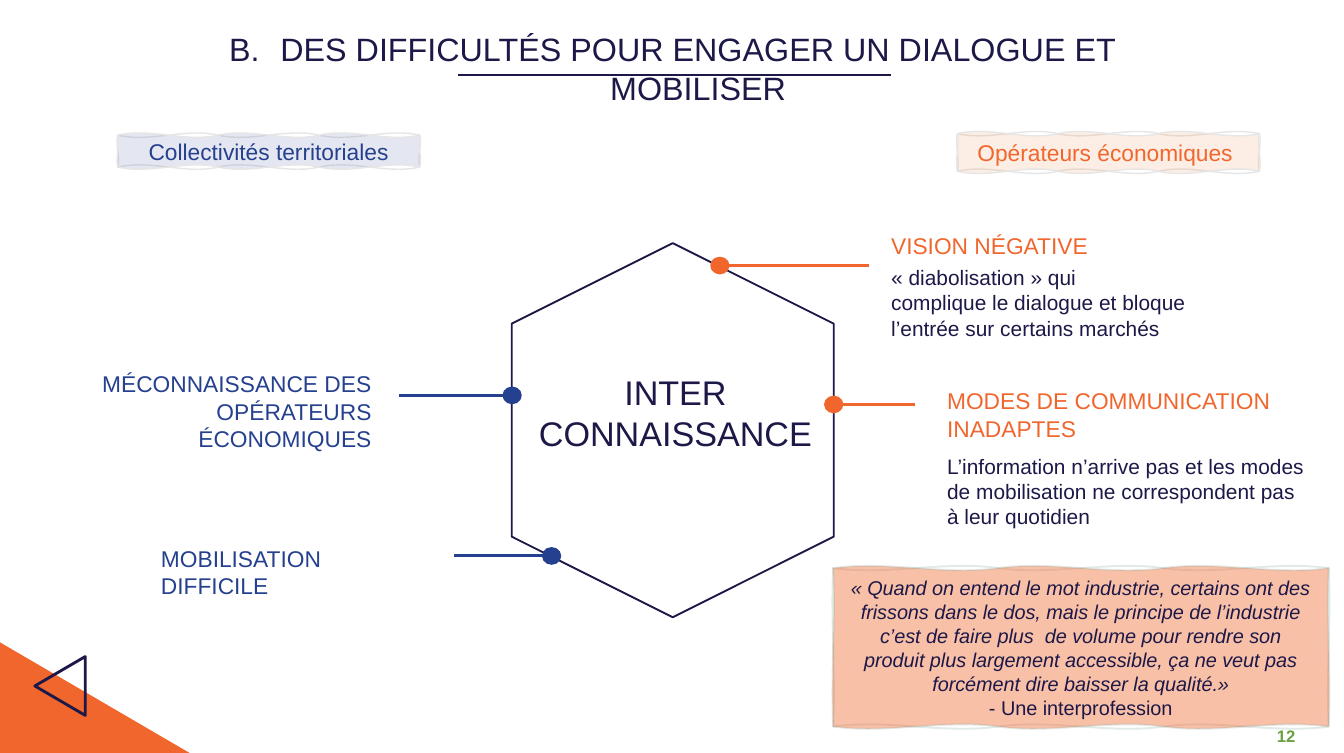
from copy import deepcopy

from lxml.etree import SubElement
from pptx import Presentation
from pptx.dml.color import RGBColor
from pptx.enum.shapes import MSO_CONNECTOR as CONN, MSO_SHAPE as SHAPE
from pptx.enum.text import MSO_ANCHOR as ANCHOR, MSO_AUTO_SIZE as AUTO, PP_ALIGN as ALIGN
from pptx.oxml.ns import qn
from pptx.util import Pt

COLORS = {
    "navy": "1C1847", "blue": "25408F", "orange": "F1662D", "peach": "ED7D31",
    "grey": "E7E6E6", "sage": "92AFA2", "green": "68A042",
}


def rgb(name):
    return RGBColor.from_string(COLORS[name])


def fade(fill, percent):
    color = fill._xPr.find(qn("a:solidFill"))[0]
    SubElement(color, qn("a:alpha"), val=str(percent * 1000))


def paint(sp, fill=None, line=None, width=0.75):
    sp.shadow.inherit = False
    if fill:
        sp.fill.solid()
        sp.fill.fore_color.rgb = rgb(fill)
    else:
        sp.fill.background()
    if line:
        sp.line.color.rgb = rgb(line)
        sp.line.width = Pt(width)
    else:
        sp.line.fill.background()


def style(p, size, color, align=ALIGN.LEFT, bold=False, italic=False):
    p.alignment = align
    font = p.font
    font.name, font.size, font.bold, font.italic = "Arial", Pt(size), bold, italic
    font.color.rgb = rgb(color)


def add_text(s, x, y, w, h, lines, size, color, align=ALIGN.LEFT, bold=False):
    tf = s.shapes.add_textbox(Pt(x), Pt(y), Pt(w), Pt(h)).text_frame
    tf.word_wrap = True
    for i, line in enumerate(lines):
        p = tf.add_paragraph() if i else tf.paragraphs[0]
        p.text = line
        style(p, size, color, align, bold)
    return tf


def add_line(s, x1, y1, x2, y2, color, width):
    line = s.shapes.add_connector(CONN.STRAIGHT, Pt(x1), Pt(y1), Pt(x2), Pt(y2))
    line.line.color.rgb = rgb(color)
    line.line.width = Pt(width)
    SubElement(line._element.spPr, qn("a:effectLst"))


def add_callout(s, x, y, end, color):
    w, h = 9.4, 8.6
    add_line(s, x, y, end, y, color, 1.5)
    dot = s.shapes.add_shape(SHAPE.FLOWCHART_CONNECTOR,
                             Pt(x - w / 2), Pt(y - h / 2), Pt(w), Pt(h))
    paint(dot, color, color)


def bend_edges(outline, bulge):
    start = outline[0][0]
    for edge in outline.findall(qn("a:lnTo")):
        end = edge[0]
        x1, y1, x2, y2 = [int(pt.get(k)) for pt in (start, end) for k in ("x", "y")]
        dx, dy = (0, Pt(bulge)) if y1 == y2 else (Pt(bulge / 3), 0)
        edge.tag = qn("a:cubicBezTo")
        for i, side in ((1, 1), (2, -1)):
            control = edge.makeelement(qn("a:pt"), {
                "x": str(x1 + (x2 - x1) * i // 3 + side * dx),
                "y": str(y1 + (y2 - y1) * i // 3 + side * dy)})
            edge.insert(i - 1, control)
        start = end


def add_sketch_box(s, x, y, w, h, fill, opacity, line, width=0.75, line_opacity=100):
    top = [(x + w * i / 3, y) for i in range(4)]
    bottom = [(px, y + h) for px, _ in reversed(top)]
    points = [(Pt(px), Pt(py)) for px, py in top + bottom + top[:1]]
    builder = s.shapes.build_freeform(*points[0])
    builder.add_line_segments(points[1:], close=True)
    sp = builder.convert_to_shape()
    front = next(sp._element.iter(qn("a:path")))
    back = deepcopy(front)
    back.set("fill", "none")
    front.addprevious(back)
    bend_edges(back, 4)
    bend_edges(front, -4)
    paint(sp, fill, line, width)
    fade(sp.fill, opacity)
    fade(sp.line.fill, line_opacity)
    tf = sp.text_frame
    tf.word_wrap = True
    tf.vertical_anchor = ANCHOR.MIDDLE
    return tf


def add_label(s, x, y, w, h, text, fill, opacity, color):
    p = add_sketch_box(s, x, y, w, h, fill, opacity, "grey").paragraphs[0]
    p.text = text
    style(p, 12, color, ALIGN.CENTER)


def add_title(s, x, y, w, h):
    title = s.shapes.title
    title.left, title.top, title.width, title.height = Pt(x), Pt(y), Pt(w), Pt(h)
    tf = title.text_frame
    tf.word_wrap = True
    tf.auto_size = AUTO.NONE
    tf.vertical_anchor = ANCHOR.TOP
    p = tf.paragraphs[0]
    p.text = "DES DIFFICULTÉS POUR ENGAGER UN DIALOGUE ET MOBILISER"
    style(p, 17, "navy", ALIGN.CENTER)
    pPr = p._p.get_or_add_pPr()
    pPr.set("marL", str(Pt(27)))
    pPr.set("indent", str(-Pt(27)))
    number = pPr.makeelement(qn("a:buAutoNum"), {"type": "alphaUcPeriod", "startAt": "2"})
    bullet_color = pPr.makeelement(qn("a:buClr"), {})
    SubElement(bullet_color, qn("a:srgbClr"), val=COLORS["navy"])
    pPr.insert(0, number)
    pPr.insert(0, bullet_color)
    add_line(s, x + 168, y + h - 0.5, x + 396.2, y + h - 0.5, "navy", 1)


def add_hexagon(s, x, y, w, h):
    sp = s.shapes.add_shape(SHAPE.HEXAGON, Pt(x + (w - h) / 2), Pt(y + (h - w) / 2),
                            Pt(h), Pt(w))
    sp.rotation = 90
    sp.adjustments[0] = 0.25
    paint(sp, None, "navy", 1)
    add_text(s, x - 33.5, y + 64.1, w + 70, 51, ["INTER", "CONNAISSANCE"], 18, "navy",
             ALIGN.CENTER)


def add_authorities(s, x, y):
    add_label(s, x + 43.3, y + 1, 159.2, 16.8, "Collectivités territoriales",
              "blue", 12, "blue")
    add_text(s, x, y + 121.2, 184.2, 36, ["MÉCONNAISSANCE DES OPÉRATEURS ÉCONOMIQUES"],
             12, "blue", ALIGN.RIGHT)
    add_text(s, x + 59, y + 213.2, 130, 36, ["MOBILISATION DIFFICILE"], 12, "blue")
    add_callout(s, x + 251.2, y + 138.1, x + 191.4, "blue")
    add_callout(s, x + 272, y + 222.7, x + 220.8, "blue")


def add_operators(s, x, y):
    add_label(s, x + 42, y + 0.2, 159.2, 19.8, "Opérateurs économiques ",
              "peach", 13, "orange")
    items = [
        (0, 48.5, 17.4, "VISION NÉGATIVE",
         "«\u00a0diabolisation\u00a0» qui\vcomplique le dialogue et bloque l’entrée "
         "sur certains marchés"),
        (29.5, 130.2, 35.1, "MODES DE COMMUNICATION INADAPTES",
         "L’information n’arrive pas et les modes de mobilisation ne correspondent pas "
         "à leur quotidien"),
    ]
    for dx, dy, gap, head, body in items:
        add_text(s, x + dx, y + dy, 210, 22, [head], 12, "orange")
        add_text(s, x + dx, y + dy + gap, 206.6, 47.5, [body], 11, "navy")
    add_callout(s, x - 83.2, y + 69.7, x - 4.5, "orange")
    add_callout(s, x - 23.2, y + 142.9, x + 19.4, "orange")


def add_quote(s, x, y, w, h):
    tf = add_sketch_box(s, x, y, w, h, "orange", 41, "sage", 1, 25)
    tf.margin_left = tf.margin_right = Pt(8.8)
    quote, author = tf.paragraphs[0], tf.add_paragraph()
    quote.text = (
        "«\u00a0Quand on entend le mot industrie, certains ont des frissons dans le dos, "
        "mais le principe de l’industrie c’est de faire plus  de volume pour rendre son "
        "produit plus largement accessible, ça ne veut pas forcément dire baisser la "
        "qualité.»")
    author.text = "- Une interprofession"
    style(quote, 10.5, "navy", ALIGN.CENTER, italic=True)
    style(author, 10.5, "navy", ALIGN.CENTER)


def add_corner(s, x, y, w, h):
    corner = s.shapes.add_shape(SHAPE.RIGHT_TRIANGLE, Pt(x), Pt(y), Pt(w), Pt(h))
    paint(corner, "orange")
    arrow = s.shapes.add_shape(SHAPE.ISOSCELES_TRIANGLE, Pt(x + 16.2), Pt(y + 9.7),
                               Pt(31), Pt(26.6))
    arrow.rotation = 270
    paint(arrow, None, "navy", 1.5)


def add_page_number(s, x, y, w, h):
    tf = add_text(s, x, y, w, h, ["12"], 8.8, "green", ALIGN.RIGHT, bold=True)
    tf.vertical_anchor = ANCHOR.MIDDLE


def main():
    prs = Presentation()
    prs.slide_width, prs.slide_height = Pt(708.5), Pt(396.7)
    s = prs.slides.add_slide(prs.slide_layouts[5])
    add_title(s, 73.4, 12, 562.3, 28)
    add_hexagon(s, 269.7, 128.1, 169.8, 197.1)
    add_authorities(s, 18.8, 70.2)
    add_operators(s, 462.7, 70.2)
    add_corner(s, 0, 338.4, 100, 58.3)
    add_quote(s, 439.2, 299.3, 261.2, 83.5)
    add_page_number(s, 530.9, 377.4, 159, 20.9)
    prs.save("out.pptx")


if __name__ == "__main__":
    main()
